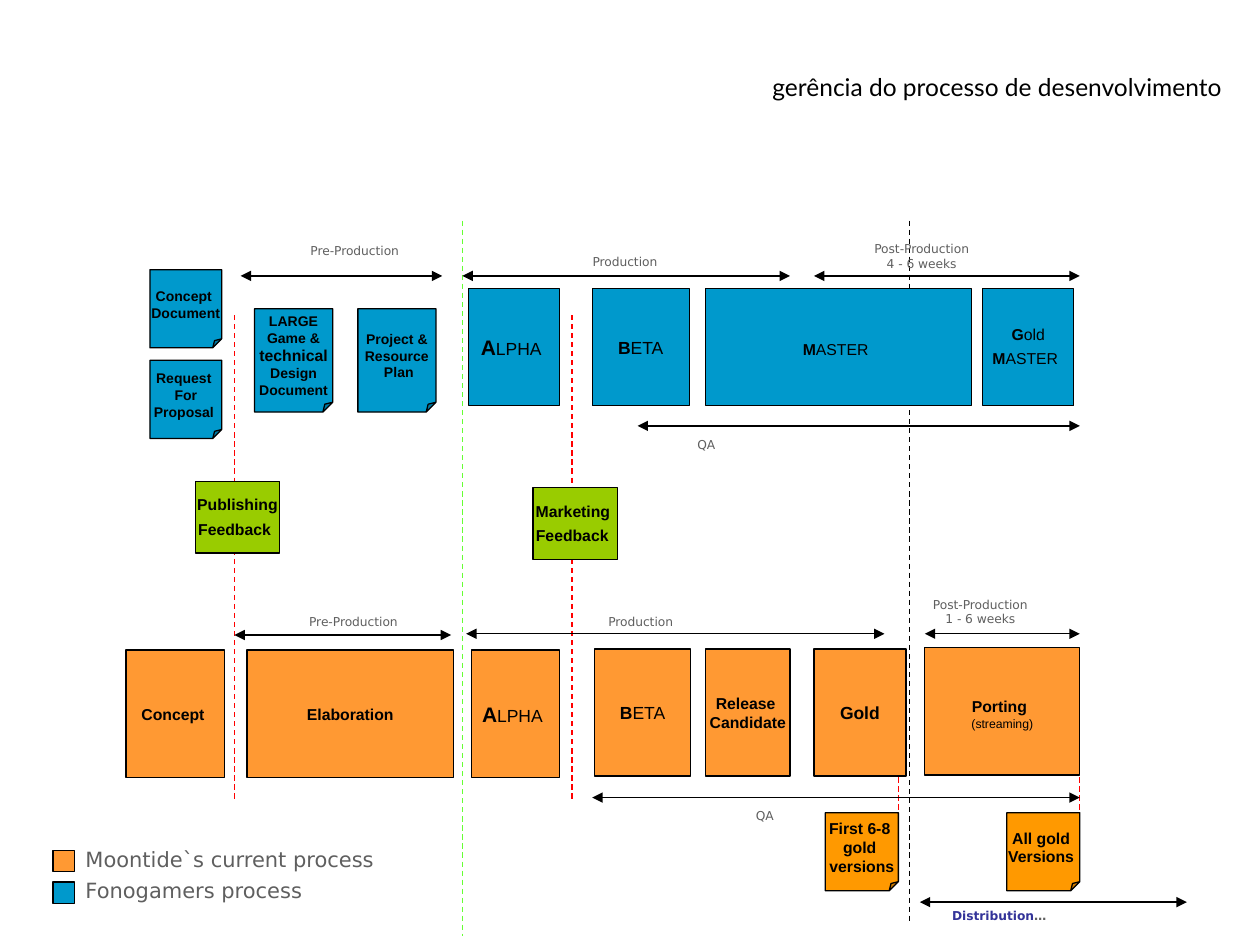
from lxml.etree import SubElement as Sub
from pptx import Presentation
from pptx.dml.color import RGBColor as Rgb
from pptx.enum.dml import MSO_LINE_DASH_STYLE as Dash
from pptx.enum.shapes import MSO_CONNECTOR_TYPE as Link, MSO_SHAPE as Form
from pptx.enum.text import MSO_ANCHOR as Anchor, PP_ALIGN as Align
from pptx.oxml.ns import qn
from pptx.util import Inches, Pt

BLACK, GREY, RED, GREEN, NAVY = "000000", "5F5F5F", "FF0000", "66FF33", "333399"
BLUE, ORANGE, AMBER, LIME = "0099CC", "FF9933", "FF9900", "99CC00"
BLOCK, NOTE = Form.FLOWCHART_PROCESS, Form.FOLDED_CORNER

ALPHA = [[("A", 12, True), ("LPHA", 10, False), (" ", 12, False)]]
BETA = [[("B", 10, True), ("ETA", 10, False)]]
MASTER = [("M", 9, True), ("ASTER", 9, False), (" ", 12, False)]


def paint(color, tone):
    color.rgb = Rgb.from_string(tone)


def apply(target, **values):
    for name, value in values.items():
        setattr(target, name, value)


def bold(size, *lines):
    return [[(line, size, True)] for line in lines]


def write(frame, paras, font="Arial", tone=BLACK, align=Align.CENTER):
    for i, runs in enumerate(paras):
        para = frame.paragraphs[0] if i == 0 else frame.add_paragraph()
        para.alignment = align
        for text, size, heavy, *own in runs:
            for j, part in enumerate(text.split("\n")):
                if j:
                    para.add_line_break()
                if part:
                    run = para.add_run()
                    run.text = part
                    apply(run.font, name=font, size=Pt(size), bold=heavy)
                    paint(run.font.color, own[0] if own else tone)


def box(slide, form, place, fill, paras=()):
    shape = slide.shapes.add_shape(form, *map(Inches, place))
    shape.shadow.inherit = False
    shape.fill.solid()
    paint(shape.fill.fore_color, fill)
    paint(shape.line.color, BLACK)
    shape.line.width = Pt(0.75)
    if form == NOTE:
        guides = shape._element.spPr.find(qn("a:prstGeom")).get_or_add_avLst()
        Sub(guides, qn("a:gd"), name="adj", fmla="val 12500")
    apply(shape.text_frame, word_wrap=False, vertical_anchor=Anchor.MIDDLE)
    write(shape.text_frame, paras)


def label(slide, place, runs, align=Align.CENTER, anchor=Anchor.MIDDLE):
    frame = slide.shapes.add_textbox(*map(Inches, place)).text_frame
    apply(frame, word_wrap=True, vertical_anchor=anchor)
    write(frame, [runs], "DejaVu Sans", GREY, align)


def line(slide, ends, tone):
    link = slide.shapes.add_connector(Link.STRAIGHT, *map(Inches, ends))
    paint(link.line.color, tone)
    link.line.width = Pt(0.75)
    Sub(link._element.spPr, qn("a:effectLst"))
    return link.line


def arrow(slide, left, right, y):
    stroke = line(slide, (left, y, right, y), BLACK)
    for end in ("a:headEnd", "a:tailEnd"):
        Sub(stroke._get_or_add_ln(), qn(end), type="triangle")


def divide(slide, x, top, foot, tone):
    line(slide, (x, top, x, foot), tone).dash_style = Dash.DASH


def head(slide):
    title = slide.shapes.title
    apply(title, left=Inches(4.21), top=Inches(0.52),
          width=Inches(5.59), height=Inches(0.33))
    apply(title.text_frame, word_wrap=True, vertical_anchor=Anchor.TOP)
    write(title.text_frame, [[("gerência do processo de desenvolvimento", 14, False)]],
          "Lato", BLACK, Align.RIGHT)


def main():
    deck = Presentation()
    apply(deck, slide_width=Inches(10), slide_height=Inches(7.5))
    slide = deck.slides.add_slide(deck.slide_layouts[5])
    head(slide)

    for x, top, foot, tone in (
        (1.86, 2.5, 6.36, RED), (4.54, 2.5, 6.36, RED),
        (7.13, 6.17, 6.45, RED), (8.57, 6.17, 6.45, RED),
        (3.67, 1.75, 7.43, GREEN), (7.22, 1.75, 7.33, BLACK),
    ):
        divide(slide, x, top, foot, tone)

    for left, right, y in (
        (1.91, 3.51, 2.19), (3.67, 6.27, 2.19), (6.46, 8.57, 2.19), (5.06, 8.57, 3.38),
        (1.86, 3.58, 5.04), (3.7, 7.02, 5.03), (7.34, 8.57, 5.03), (4.7, 8.57, 6.33),
        (7.3, 9.42, 7.16),
    ):
        arrow(slide, left, right, y)

    for text, *place in (
        ("Production", 4.39, 1.98, 1.14, 0.2),
        ("Post-Production\n4 - 6 weeks", 6.8, 1.83, 1.03, 0.41),
        ("QA", 5.22, 3.43, 0.77, 0.2),
        ("Production", 4.47, 4.82, 1.23, 0.22),
        ("Post-Production\n1 - 6 weeks", 7.22, 4.63, 1.12, 0.45),
        ("QA", 5.65, 6.36, 0.84, 0.22),
    ):
        label(slide, place, [(text, 7, False)])
    for place in ((2.22, 1.88, 1.19, 0.31), (2.16, 4.83, 1.29, 0.34)):
        label(slide, place, [("Pre-Production", 7, False)], anchor=Anchor.TOP)
    label(slide, (7.42, 7.16, 1.02, 0.22),
          [("Distribution", 7, True, NAVY), ("…", 7, True)])

    for left, width, paras in (
        (3.72, 0.72, ALPHA), (4.7, 0.77, BETA), (5.6, 2.11, [MASTER]),
        (7.8, 0.72, [[("G", 9, True), ("old", 9, False)], MASTER]),
    ):
        box(slide, BLOCK, (left, 2.29, width, 0.93), BLUE, paras)

    port = [[("Porting", 9, True), (" \n", 12, False), ("(streaming)", 7, False)]]
    for left, top, width, paras in (
        (1, 5.16, 0.78, bold(9, "Concept ")),
        (1.96, 5.16, 1.64, bold(9, "Elaboration")),
        (3.74, 5.16, 0.7, ALPHA), (4.72, 5.15, 0.76, BETA),
        (5.6, 5.15, 0.67, bold(9, "Release \nCandidate")),
        (6.46, 5.15, 0.73, bold(10, "Gold")), (7.34, 5.14, 1.23, port),
    ):
        box(slide, BLOCK, (left, top, width, 1.01), ORANGE, paras)

    large = bold(8, "LARGE", "Game &", "technical", "Design", "Document")
    large[2] = [("technical", 9, True)]
    for place, fill, paras in (
        ((1.19, 2.14, 0.57, 0.62), BLUE, bold(8, "Concept ", "Document")),
        ((1.19, 2.86, 0.57, 0.62), BLUE, bold(8, "Request ", "For", "Proposal ")),
        ((2.02, 2.45, 0.62, 0.82), BLUE, large),
        ((2.84, 2.45, 0.62, 0.82), BLUE, bold(8, "Project &", "Resource", " Plan")),
        ((6.55, 6.45, 0.58, 0.62), AMBER, bold(9, "First 6-8 ", "gold \nversions")),
        ((7.99, 6.45, 0.58, 0.62), AMBER, bold(9, "All gold ", "Versions ")),
    ):
        box(slide, NOTE, place, fill, paras)

    for left, top, word in ((1.55, 3.82, "Publishing"), (4.23, 3.87, "Marketing ")):
        paras = bold(9, word) + [[("Feedback", 9, True), (" ", 12, False)]]
        box(slide, BLOCK, (left, top, 0.67, 0.57), LIME, paras)

    for i, (fill, text) in enumerate((
        (ORANGE, "Moontide`s current process"), (BLUE, "Fonogamers process"),
    )):
        y = 6.75 + 0.25 * i
        box(slide, Form.RECTANGLE, (0.42, y, 0.17, 0.17), fill)
        label(slide, (0.58, y - 0.09, 2.75, 0.31), [(text, 12, False)], Align.LEFT)

    deck.save("out.pptx")


if __name__ == "__main__":
    main()
